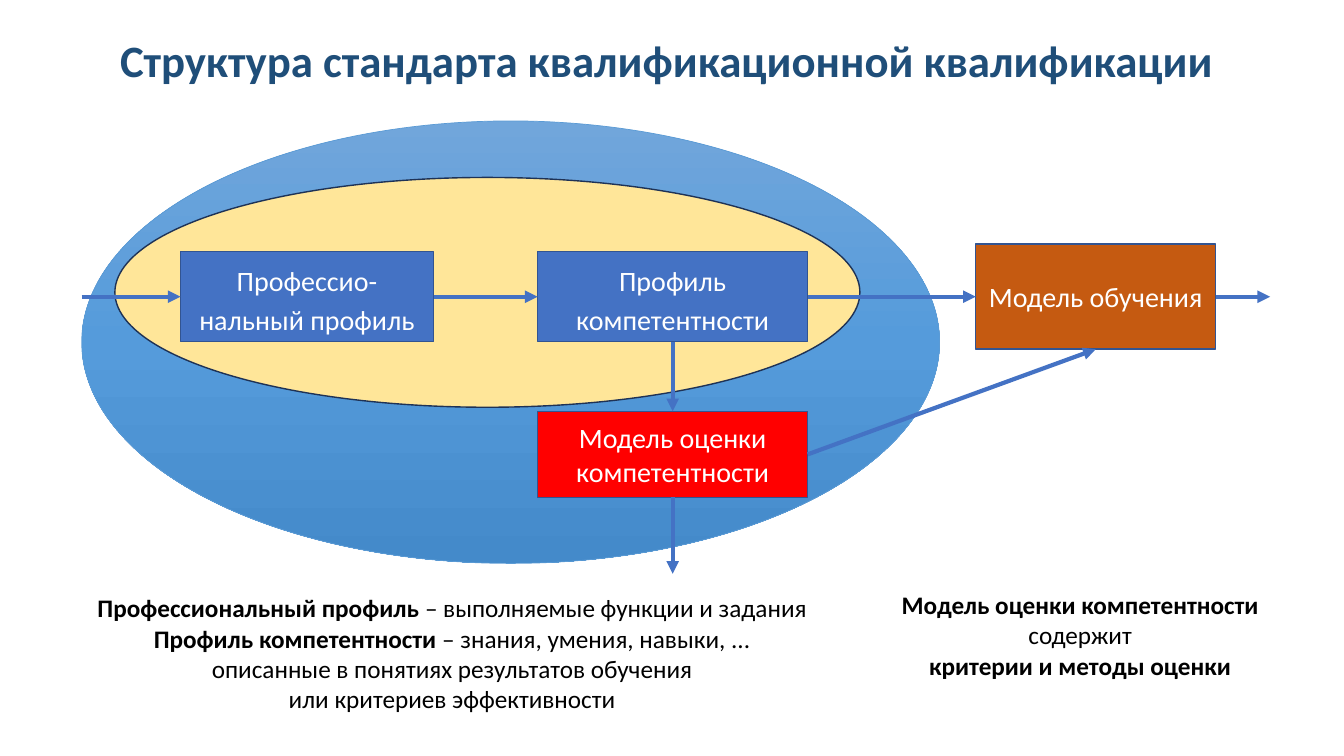
from copy import deepcopy
from typing import NamedTuple, Optional, Union

from pptx import Presentation
from pptx.dml.color import RGBColor
from pptx.enum.dml import MSO_LINE
from pptx.enum.shapes import MSO_CONNECTOR, MSO_SHAPE
from pptx.enum.text import MSO_ANCHOR, MSO_AUTO_SIZE, PP_ALIGN
from pptx.oxml.ns import qn
from pptx.util import Inches, Pt
from lxml.etree import SubElement

WHITE = RGBColor(0xFF, 0xFF, 0xFF)
BLACK = RGBColor(0, 0, 0)
NAVY = RGBColor(0x1F, 0x4E, 0x79)
BLUE = RGBColor(0x44, 0x72, 0xC4)
EDGE = RGBColor(0x32, 0x54, 0x91)
RUST = RGBColor(0xC5, 0x5A, 0x11)
RED = RGBColor(0xFF, 0, 0)
CREAM = RGBColor(0xFF, 0xE6, 0x99)
INK = RGBColor(0x1E, 0x32, 0x56)
SKY = RGBColor(0x5B, 0x9B, 0xD5)
SHADES = (RGBColor(0x71, 0xA6, 0xDB), RGBColor(0x55, 0x9B, 0xDB),
          RGBColor(0x44, 0x8A, 0xCA))
FONT = "Calibri"
WIDTH, HEIGHT = Inches(13.33), Inches(7.5)
TOP, LEFT, BOTTOM, RIGHT = range(4)


class Area(NamedTuple):
    """Left, top, width and height in percent of the slide."""
    x: float
    y: float
    w: float
    h: float


class Spot(NamedTuple):
    """A free point in percent of the slide."""
    x: float
    y: float


class Join(NamedTuple):
    box: str
    side: int


class Box(NamedTuple):
    area: Area
    text: str
    fill: RGBColor
    pitch: Optional[Pt] = None


class Arrow(NamedTuple):
    start: Union[Spot, Join]
    end: Union[Spot, Join]


class Line(NamedTuple):
    bold: str = ""
    plain: str = ""


class Note(NamedTuple):
    area: Area
    lines: tuple[Line, ...]


TITLE = "Структура стандарта квалификационной квалификации"
HEAD = Area(8.18, 3.6, 83.7, 8.53)
OUTER = Area(6.08, 16, 63.83, 58.53)
INNER = Area(8.55, 23.47, 55.43, 30.4)
BOXES = {
    "job": Box(Area(13.43, 33.3, 18.83, 11.9), "Профессио-нальный профиль",
               BLUE, Pt(28)),
    "skill": Box(Area(40, 33.3, 20.1, 11.9), "Профиль компетентности",
                 BLUE, Pt(28)),
    "learn": Box(Area(72.6, 32.3, 17.85, 13.9), "Модель обучения", RUST),
    "test": Box(Area(40, 54.4, 20.1, 11.4), "Модель оценки компетентности",
                RED),
}
ARROWS = (
    Arrow(Spot(6.08, 39.25), Join("job", LEFT)),
    Arrow(Join("job", RIGHT), Join("skill", LEFT)),
    Arrow(Join("skill", RIGHT), Join("learn", LEFT)),
    Arrow(Join("skill", BOTTOM), Join("test", TOP)),
    Arrow(Join("test", RIGHT), Join("learn", BOTTOM)),
    Arrow(Join("test", BOTTOM), Spot(50.05, 75.9)),
    Arrow(Join("learn", RIGHT), Spot(94.5, 39.25)),
)
NOTES = (
    Note(Area(65.1, 77.33, 30.53, 13.47), (
        Line(bold="Модель оценки компетентности"),
        Line(plain="содержит"),
        Line(bold="критерии и методы оценки"))),
    Note(Area(6.23, 77.73, 54.83, 17.47), (
        Line("Профессиональный профиль ", "– выполняемые функции и задания"),
        Line("Профиль компетентности ", "– знания, умения, навыки, ..."),
        Line(plain="описанные в понятиях результатов обучения"),
        Line(plain="или критериев эффективности"))),
)


def across(part: float) -> int:
    return round(WIDTH * part / 100)


def down(part: float) -> int:
    return round(HEIGHT * part / 100)


def frame(area: Area) -> tuple[int, int, int, int]:
    return across(area.x), down(area.y), across(area.w), down(area.h)


def style(para, size: int, color: RGBColor, align=PP_ALIGN.CENTER) -> None:
    para.alignment = align
    para.font.name, para.font.size = FONT, Pt(size)
    para.font.color.rgb = color


def add_form(slide, kind, area: Area, edge: RGBColor, weight: float = 1):
    form = slide.shapes.add_shape(kind, *frame(area))
    form.shadow.inherit = False
    form.line.color.rgb, form.line.width = edge, Pt(weight)
    return form


def add_ovals(slide) -> None:
    outer = add_form(slide, MSO_SHAPE.OVAL, OUTER, SKY, 0.5)
    outer.fill.gradient()
    outer.fill.gradient_angle = 270
    stops = next(outer.element.iter(qn("a:gsLst")))
    stops.append(deepcopy(stops[0]))
    for stop, shade, place in zip(outer.fill.gradient_stops, SHADES, (0, 0.5, 1)):
        stop.color.rgb, stop.position = shade, place
    inner = add_form(slide, MSO_SHAPE.OVAL, INNER, INK)
    inner.fill.solid()
    inner.fill.fore_color.rgb = CREAM


def add_box(slide, box: Box):
    form = add_form(slide, MSO_SHAPE.RECTANGLE, box.area, EDGE)
    form.fill.solid()
    form.fill.fore_color.rgb = box.fill
    text = form.text_frame
    text.text, text.word_wrap = box.text, True
    text.vertical_anchor = MSO_ANCHOR.MIDDLE
    para = text.paragraphs[0]
    style(para, 20, WHITE)
    if box.pitch:
        para.line_spacing = box.pitch
    return form


def add_arrow(slide, arrow: Arrow, forms: dict) -> None:
    ends = [(across(tip.x), down(tip.y)) if isinstance(tip, Spot) else (0, 0)
            for tip in arrow]
    link = slide.shapes.add_connector(MSO_CONNECTOR.STRAIGHT, *ends[0], *ends[1])
    for tip, fix in zip(arrow, (link.begin_connect, link.end_connect)):
        if isinstance(tip, Join):
            fix(forms[tip.box], tip.side)
    link.line.color.rgb, link.line.width = BLUE, Pt(3)
    link.line.dash_style = MSO_LINE.SOLID
    props = link.element.spPr
    SubElement(props.find(qn("a:ln")), qn("a:tailEnd"), type="triangle")
    SubElement(props, qn("a:effectLst"))


def add_note(slide, note: Note) -> None:
    text = slide.shapes.add_textbox(*frame(note.area)).text_frame
    text.word_wrap, text.auto_size = False, MSO_AUTO_SIZE.SHAPE_TO_FIT_TEXT
    for i, line in enumerate(note.lines):
        para = text.add_paragraph() if i else text.paragraphs[0]
        style(para, 18, BLACK)
        for words, bold in ((line.bold, True), (line.plain, False)):
            if words:
                run = para.add_run()
                run.text, run.font.bold = words, bold


def set_title(slide) -> None:
    title = slide.shapes.title
    title.left, title.top, title.width, title.height = frame(HEAD)
    text = title.text_frame
    text.text, text.word_wrap = TITLE, False
    text.auto_size = MSO_AUTO_SIZE.SHAPE_TO_FIT_TEXT
    text.vertical_anchor = MSO_ANCHOR.TOP
    style(text.paragraphs[0], 32, NAVY, PP_ALIGN.LEFT)
    text.paragraphs[0].font.bold = True


def main() -> None:
    deck = Presentation()
    deck.slide_width, deck.slide_height = WIDTH, HEIGHT
    slide = deck.slides.add_slide(deck.slide_layouts.get_by_name("Title Only"))
    set_title(slide)
    add_ovals(slide)
    forms = {name: add_box(slide, box) for name, box in BOXES.items()}
    for arrow in ARROWS:
        add_arrow(slide, arrow, forms)
    for note in NOTES:
        add_note(slide, note)
    deck.save("out.pptx")


if __name__ == "__main__":
    main()
